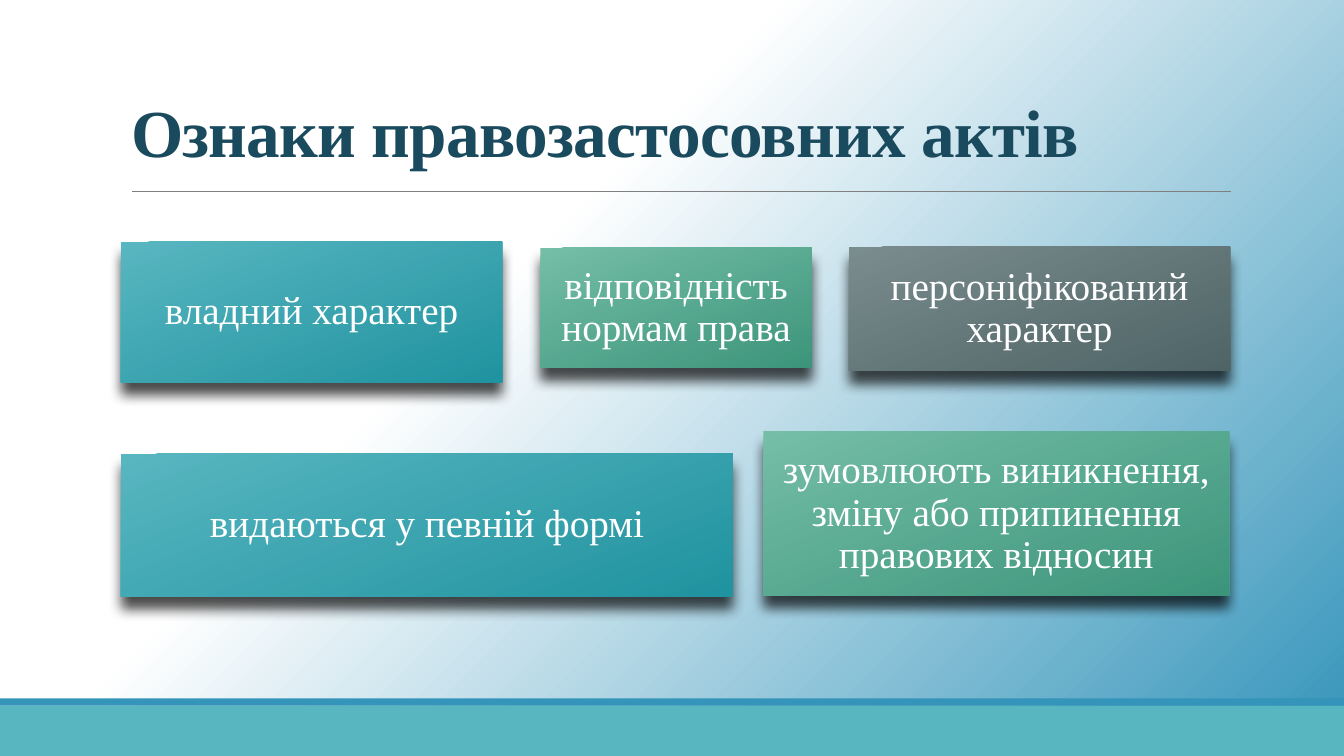
from dataclasses import dataclass

from lxml.etree import SubElement
from pptx import Presentation
from pptx.dml.color import RGBColor
from pptx.enum.shapes import MSO_CONNECTOR, MSO_SHAPE
from pptx.enum.text import MSO_ANCHOR, MSO_AUTO_SIZE, PP_ALIGN
from pptx.oxml.ns import qn
from pptx.util import Inches, Pt


@dataclass(frozen=True)
class Theme:
    font: str = "Times New Roman"
    head: int = 48
    body: int = 28
    ink: str = "1A4A5D"
    white: str = "FFFFFF"
    blue: str = "3494BA"
    aqua: str = "58B6C0"
    rule: str = "808080"
    teal: tuple = ("58B6C0", "2093A0")
    green: tuple = ("75BDA7", "3C957A")
    gray: tuple = ("7A8C8E", "4E6466")


THEME = Theme()

# Left, top, width, height, gradient, text
CARDS = [
    (1.2, 2.4, 3.78, 1.39, THEME.teal, "владний характер"),
    (5.36, 2.46, 2.69, 1.19, THEME.green, "відповідність нормам права"),
    (8.42, 2.45, 3.78, 1.23, THEME.gray, "персоніфікований характер"),
    (1.2, 4.5, 6.07, 1.42, THEME.teal, "видаються у певній формі"),
    (7.57, 4.28, 4.62, 1.63, THEME.green,
     "зумовлюють виникнення, зміну або припинення правових відносин"),
]


def rgb(code):
    return RGBColor.from_string(code)


def blend(fill, pair, angle, start=0):
    """Two-colour gradient; the angle runs clockwise."""
    fill.gradient()
    fill.gradient_angle = 360 - angle
    for stop, code, place in zip(fill.gradient_stops, pair, (start, 1)):
        stop.color.rgb = rgb(code)
        stop.position = place


def style(para, size, code, bold=False):
    font = para.font
    font.name, font.size, font.bold = THEME.font, Pt(size), bold
    font.color.rgb = rgb(code)


def add_box(slide, left, top, width, height):
    box = slide.shapes.add_shape(
        MSO_SHAPE.RECTANGLE, *map(Inches, (left, top, width, height)))
    box.shadow.inherit = False
    box.line.fill.background()
    return box


def add_band(slide, top, height, code):
    band = add_box(slide, 0, top, 13.33, height)
    band.fill.solid()
    band.fill.fore_color.rgb = rgb(code)


def add_rule(slide, left, right, top):
    rule = slide.shapes.add_connector(
        MSO_CONNECTOR.STRAIGHT, *map(Inches, (left, top, right, top)))
    rule.line.color.rgb = rgb(THEME.rule)
    rule.line.width = Pt(0.5)
    SubElement(rule._element.spPr, qn("a:effectLst"))


def set_title(slide, text):
    title = slide.shapes.title
    title.left, title.top = Inches(1.2), Inches(0.16)
    title.width, title.height = Inches(11), Inches(1.59)
    frame = title.text_frame
    frame.text = text
    frame.word_wrap = True
    frame.auto_size = MSO_AUTO_SIZE.NONE
    frame.vertical_anchor = MSO_ANCHOR.BOTTOM
    para = frame.paragraphs[0]
    para.alignment = PP_ALIGN.LEFT
    para.line_spacing = 0.85
    style(para, THEME.head, THEME.ink, bold=True)
    # Tighten the letters by half a point
    para.runs[0].font._element.set("spc", "-50")


def add_shade(box):
    effects = box._element.spPr.find(qn("a:effectLst"))
    shade = SubElement(effects, qn("a:outerShdw"), blurRad=str(Pt(9)),
                       dist=str(Pt(9)), dir="5400000", rotWithShape="0")
    color = SubElement(shade, qn("a:srgbClr"), val="000000")
    SubElement(color, qn("a:alpha"), val="70000")


def add_card(slide, left, top, width, height, pair, text):
    card = add_box(slide, left, top, width, height)
    blend(card.fill, pair, 69)
    add_shade(card)
    frame = card.text_frame
    frame.text = text
    frame.word_wrap = True
    frame.vertical_anchor = MSO_ANCHOR.MIDDLE
    frame.margin_left = frame.margin_right = Inches(0.12)
    frame.margin_top = frame.margin_bottom = Inches(0.12)
    para = frame.paragraphs[0]
    para.alignment = PP_ALIGN.CENTER
    para.line_spacing = 0.9
    style(para, THEME.body, THEME.white)


def main():
    deck = Presentation()
    deck.slide_width, deck.slide_height = Inches(13.33), Inches(7.5)
    slide = deck.slides.add_slide(deck.slide_layouts[5])

    # Backdrop and footer bands
    blend(slide.background.fill, (THEME.white, THEME.blue), 45, start=0.37)
    add_band(slide, 7, 0.5, THEME.aqua)
    add_band(slide, 6.93, 0.07, THEME.blue)

    # Heading
    add_rule(slide, 1.31, 12.21, 1.9)
    set_title(slide, "Ознаки правозастосовних актів")

    # Feature cards
    for card in CARDS:
        add_card(slide, *card)

    deck.save("out.pptx")


if __name__ == "__main__":
    main()
